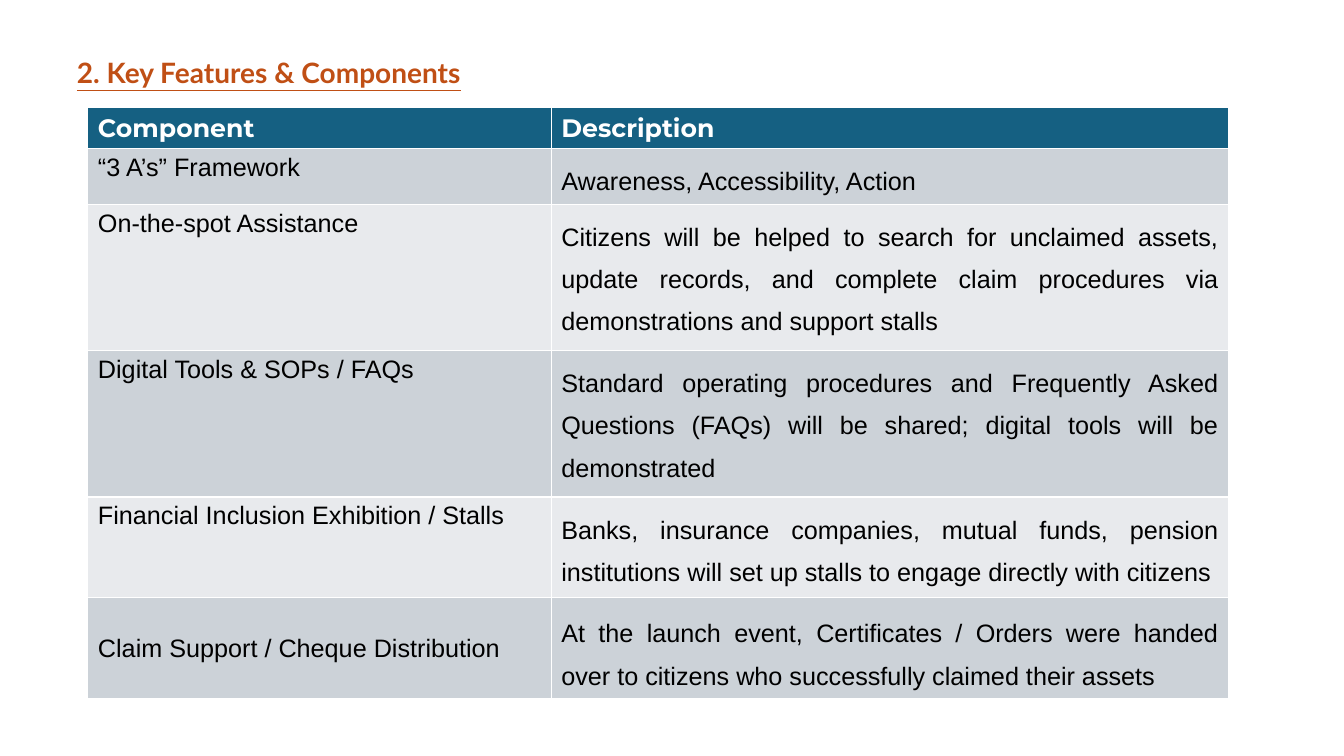
from pptx import Presentation
from pptx.dml.color import RGBColor
from pptx.enum.text import MSO_ANCHOR, PP_ALIGN
from pptx.util import Pt

TITLE = "2. Key Features & Components"
HEADER = ("Component", "Description")
COMPONENTS = [
    ("“3 A’s” Framework", "Awareness, Accessibility, Action"),
    ("On-the-spot Assistance",
     "Citizens will be helped to search for unclaimed assets, update records, "
     "and complete claim procedures via demonstrations and support stalls"),
    ("Digital Tools & SOPs / FAQs",
     "Standard operating procedures and Frequently Asked Questions (FAQs) "
     "will be shared; digital tools will be demonstrated"),
    ("Financial Inclusion Exhibition / Stalls",
     "Banks, insurance companies, mutual funds, pension institutions "
     "will set up stalls to engage directly with citizens"),
    ("Claim Support / Cheque Distribution",
     "At the launch event, Certificates / Orders were handed over to citizens "
     "who successfully claimed their assets"),
]
COLORS = {"title": "C04F15", "header": "156082", "header_text": "FFFFFF",
          "text": "000000", "odd": "CCD2D8", "even": "E8EAED"}
COLUMN_WIDTHS = (331, 483.8)
ROW_HEIGHTS = (29.2, 39.2, 104.6, 104.6, 72, 71.5)


def set_font(paragraph, name, size, color, bold=False):
    font = paragraph.font
    font.name, font.size, font.bold = name, Pt(size), bold
    font.color.rgb = RGBColor.from_string(COLORS[color])


def add_title(page):
    box = page.shapes.add_textbox(Pt(47.8), Pt(36), Pt(480), Pt(55.4))
    box.text_frame.word_wrap = True
    para = box.text_frame.paragraphs[0]
    para.text = TITLE
    set_font(para, "Lato", 20, "title", True)
    para.font.underline = True


def fill_cell(cell, text, fill):
    cell.text = text
    cell.fill.solid()
    cell.fill.fore_color.rgb = RGBColor.from_string(COLORS[fill])
    return cell.text_frame.paragraphs[0]


def add_component_table(page):
    table = page.shapes.add_table(
        len(ROW_HEIGHTS), len(COLUMN_WIDTHS), Pt(62.8), Pt(77),
        Pt(sum(COLUMN_WIDTHS)), Pt(sum(ROW_HEIGHTS))).table
    for column, width in zip(table.columns, COLUMN_WIDTHS):
        column.width = Pt(width)
    for row, height in zip(table.rows, ROW_HEIGHTS):
        row.height = Pt(height)

    for column, text in enumerate(HEADER):
        para = fill_cell(table.cell(0, column), text, "header")
        set_font(para, "Montserrat", 18, "header_text", True)

    for number, texts in enumerate(COMPONENTS, start=1):
        for column, text in enumerate(texts):
            cell = table.cell(number, column)
            para = fill_cell(cell, text, "odd" if number % 2 else "even")
            set_font(para, "Arial", 18, "text")
            if column == 1:
                para.alignment = PP_ALIGN.JUSTIFY
                para.line_spacing = 1.5
            if number == len(COMPONENTS):
                cell.vertical_anchor = MSO_ANCHOR.MIDDLE


def main():
    """Build the key features slide and save it."""
    deck = Presentation()
    deck.slide_width, deck.slide_height = Pt(960), Pt(540)
    page = deck.slides.add_slide(deck.slide_layouts[6])
    add_title(page)
    add_component_table(page)
    deck.save("out.pptx")


if __name__ == "__main__":
    main()
